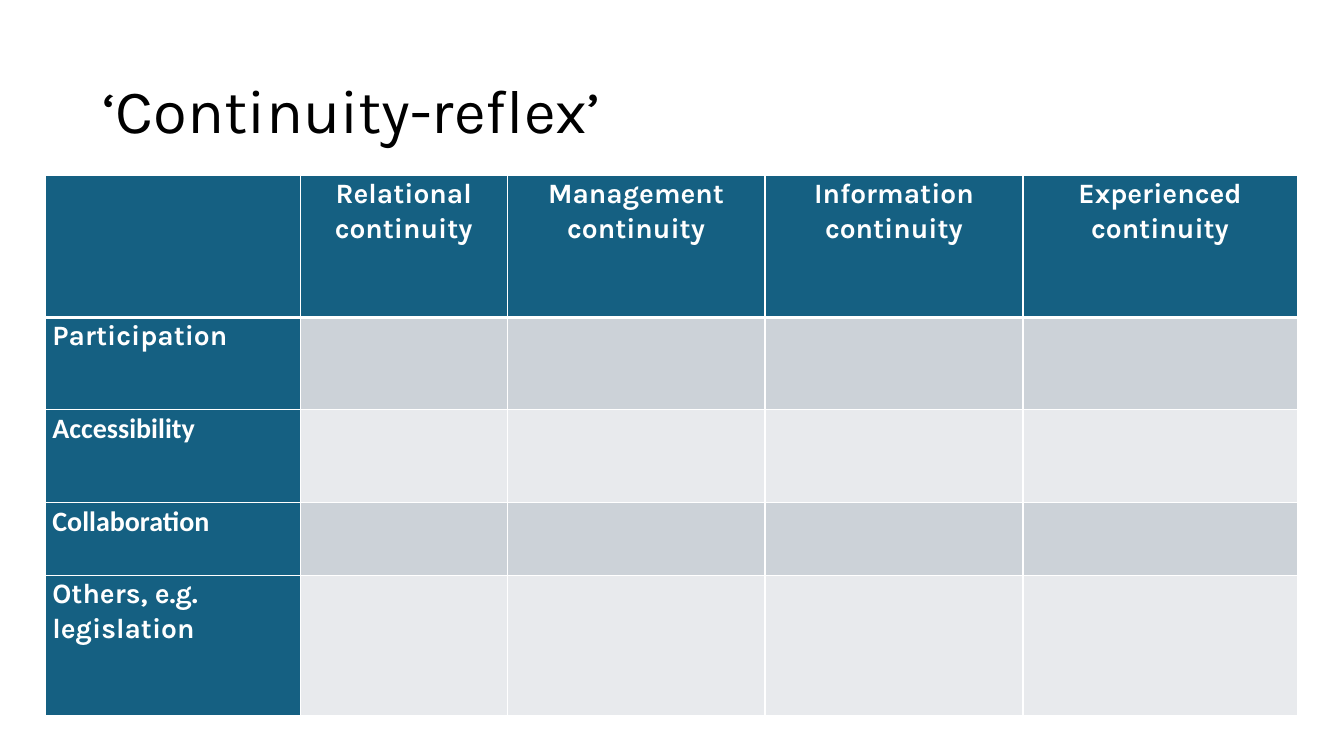
from lxml import etree
from pptx import Presentation
from pptx.dml.color import RGBColor
from pptx.enum.text import MSO_ANCHOR, PP_ALIGN
from pptx.oxml.ns import qn
from pptx.util import Cm, Pt

LEFT, CENTER = PP_ALIGN.LEFT, PP_ALIGN.CENTER
MIDDLE = MSO_ANCHOR.MIDDLE

BLACK = RGBColor(0x00, 0x00, 0x00)
WHITE = RGBColor(0xFF, 0xFF, 0xFF)
TEAL = RGBColor(0x15, 0x60, 0x82)
BANDS = (RGBColor(0xCC, 0xD2, 0xD8), RGBColor(0xE8, 0xEA, 0xED))

KARLA, CALIBRI = "Karla", "Calibri"
COLUMN_WIDTHS = (6.43, 5.21, 6.5, 6.5, 6.91)
ROW_HEIGHTS = (3.58, 2.31, 2.36, 1.83, 3.53)

CONTINUITIES = ("Relational", "Management", "Information", "Experienced")
THEMES = (
    ("Participation", KARLA),
    ("Accessibility", CALIBRI),
    ("Collaboration", CALIBRI),
    ("Others, e.g. legislation", KARLA),
)


class MatrixSlide:
    """Holds the style and the current slide."""

    def __init__(self, prs):
        self.slide = prs.slides.add_slide(prs.slide_layouts[5])

    def title(self, text, left, top, width, height):
        heading = self.slide.shapes.title
        heading.left, heading.top = Cm(left), Cm(top)
        heading.width, heading.height = Cm(width), Cm(height)
        heading.text_frame.text = text
        heading.text_frame.vertical_anchor = MIDDLE
        line = heading.text_frame.paragraphs[0]
        line.alignment = LEFT
        line.line_spacing = 0.9
        self.font(line, KARLA, 44, BLACK, False)

    def table(self, left, top, widths, heights):
        grid = self.slide.shapes.add_table(
            len(heights), len(widths), Cm(left), Cm(top),
            Cm(sum(widths)), Cm(sum(heights))).table
        grid.horz_banding = False
        for column, width in zip(grid.columns, widths):
            column.width = Cm(width)
        for row, height in zip(grid.rows, heights):
            row.height = Cm(height)
        return grid

    def fill(self, cell, color, bottom=1):
        cell.fill.solid()
        cell.fill.fore_color.rgb = color
        properties = cell._tc.get_or_add_tcPr()
        # Border elements come before the fill
        sides = (("L", 1), ("R", 1), ("T", 1), ("B", bottom))
        for place, (side, points) in enumerate(sides):
            border = etree.Element(qn(f"a:ln{side}"), w=str(Pt(points)))
            solid = etree.SubElement(border, qn("a:solidFill"))
            etree.SubElement(solid, qn("a:srgbClr"), val=str(WHITE))
            properties.insert(place, border)

    def label(self, cell, text, font=KARLA, align=LEFT):
        cell.margin_left = cell.margin_right = Cm(0.18)
        cell.margin_top = cell.margin_bottom = 0
        cell.text = text
        line = cell.text_frame.paragraphs[0]
        line.alignment = align
        line.line_spacing = 1.07
        line.space_after = Pt(8)
        self.font(line, font, 20, WHITE, True)

    def font(self, line, name, size, color, bold):
        line.font.name = name
        line.font.size = Pt(size)
        line.font.color.rgb = color
        line.font.bold = bold


def main():
    prs = Presentation()
    prs.slide_width, prs.slide_height = Cm(33.87), Cm(19.05)
    page = MatrixSlide(prs)

    # Title
    page.title("‘Continuity-reflex’", 2.34, 1.02, 29.21, 3.68)

    # Cell colours and borders
    matrix = page.table(1.14, 4.42, COLUMN_WIDTHS, ROW_HEIGHTS)
    for r in range(len(ROW_HEIGHTS)):
        for c in range(len(COLUMN_WIDTHS)):
            is_header = r == 0 or c == 0
            color = TEAL if is_header else BANDS[(r - 1) % 2]
            page.fill(matrix.cell(r, c), color, bottom=3 if r == 0 else 1)

    # Column and row headings
    for c, kind in enumerate(CONTINUITIES, 1):
        page.label(matrix.cell(0, c), f"{kind} continuity", align=CENTER)
    for r, (theme, font) in enumerate(THEMES, 1):
        page.label(matrix.cell(r, 0), theme, font)

    prs.save("out.pptx")


if __name__ == "__main__":
    main()
